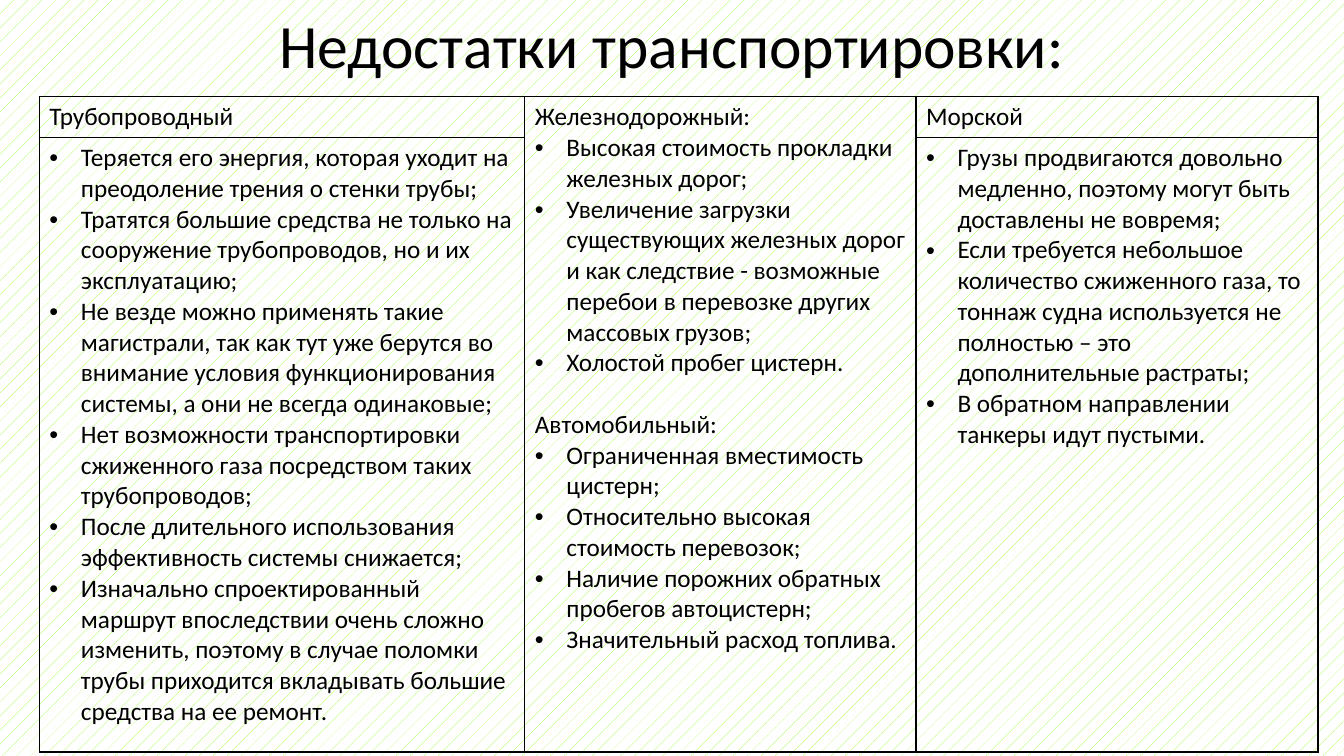
from dataclasses import dataclass

import pptx
import pptx.dml.color
import pptx.enum.dml
import pptx.enum.text
import pptx.oxml.ns
import pptx.util
from lxml import etree

Pt = pptx.util.Pt
ANCHOR = pptx.enum.text.MSO_ANCHOR
ALIGN = pptx.enum.text.PP_ALIGN


@dataclass(frozen=True)
class Theme:
    font: str = "Calibri"
    ink: str = "000000"
    paper: str = "FFFFFF"
    hatch: str = "9AF927"
    title_size: float = 44
    body_size: float = 18
    bullet_indent: float = 22.5
    section_gap: float = 22
    border_width: float = 1


@dataclass(frozen=True)
class Section:
    heading: str
    drawbacks: tuple[str, ...]


THEME = Theme()
SLIDE_SIZE = (960, 540)
TITLE_BOX = (66.2, 0, 828, 69.1)
TABLE_BOX = (28.1, 69.1, 913.4, 468)
COLUMN_WIDTHS = (346.8, 279.4, 287.2)
HEADING_HEIGHT = 29.2
ROW_HEIGHTS = (HEADING_HEIGHT, TABLE_BOX[3] - HEADING_HEIGHT)

PIPELINE = Section("Трубопроводный", (
    "Теряется его энергия, которая уходит на преодоление трения о стенки трубы;",
    "Тратятся большие средства не только на сооружение трубопроводов, но и их эксплуатацию;",
    "Не везде можно применять такие магистрали, так как тут уже берутся во внимание "
    "условия функционирования системы, а они не всегда одинаковые;",
    "Нет возможности транспортировки сжиженного газа посредством таких трубопроводов;",
    "После длительного использования эффективность системы снижается;",
    "Изначально спроектированный маршрут впоследствии очень сложно изменить, поэтому "
    "в случае поломки трубы приходится вкладывать большие средства на ее ремонт.",
))
RAILWAY = Section("Железнодорожный:", (
    "Высокая стоимость прокладки железных дорог;",
    "Увеличение загрузки существующих железных дорог и как следствие - возможные "
    "перебои в перевозке других массовых грузов;",
    "Холостой пробег цистерн.",
))
ROAD = Section("Автомобильный:", (
    "Ограниченная вместимость цистерн;",
    "Относительно высокая стоимость перевозок;",
    "Наличие порожних обратных пробегов автоцистерн;",
    "Значительный расход топлива.",
))
SEA = Section("Морской", (
    "Грузы продвигаются довольно медленно, поэтому могут быть доставлены не вовремя;",
    "Если требуется небольшое количество сжиженного газа, то тоннаж судна используется "
    "не полностью – это дополнительные растраты;",
    "В обратном направлении танкеры идут пустыми.",
))


def color(value: str) -> pptx.dml.color.RGBColor:
    return pptx.dml.color.RGBColor.from_string(value)


def add_child(parent, tag: str, **attributes: str):
    return etree.SubElement(parent, pptx.oxml.ns.qn(tag), attributes)


def write(frame, text: str, *, size: float = THEME.body_size, bullet: bool = False,
          align=ALIGN.LEFT, line_spacing: float = 1.0, space_before: float = 0) -> None:
    """Fill the frame's first paragraph, or add one if it already has text."""
    paragraph = frame.add_paragraph() if frame.text else frame.paragraphs[0]
    paragraph.alignment = align
    paragraph.line_spacing = line_spacing
    if space_before:
        paragraph.space_before = Pt(space_before)
    if bullet:
        properties = paragraph._p.get_or_add_pPr()
        indent = Pt(THEME.bullet_indent)
        properties.set("marL", str(indent))
        properties.set("indent", str(-indent))
        add_child(properties, "a:buFont", typeface="Arial")
        add_child(properties, "a:buChar", char="•")
    run = paragraph.add_run()
    run.text = text
    run.font.name = THEME.font
    run.font.size = Pt(size)
    run.font.color.rgb = color(THEME.ink)


def write_drawbacks(frame, section: Section) -> None:
    for drawback in section.drawbacks:
        write(frame, drawback, bullet=True)


def style_cell(cell) -> None:
    """Outline the cell on all sides and leave it unfilled."""
    properties = cell._tc.get_or_add_tcPr()
    for side in ("a:lnL", "a:lnR", "a:lnT", "a:lnB"):
        line = add_child(properties, side, w=str(Pt(THEME.border_width)))
        add_child(add_child(line, "a:solidFill"), "a:srgbClr", val=THEME.ink)
    cell.fill.background()


def paint_background(slide) -> None:
    fill = slide.background.fill
    fill.patterned()
    fill.pattern = pptx.enum.dml.MSO_PATTERN.PERCENT_5
    fill.fore_color.rgb = color(THEME.hatch)
    fill.back_color.rgb = color(THEME.paper)


def add_title(slide) -> None:
    frame = slide.shapes.add_textbox(*map(Pt, TITLE_BOX)).text_frame
    frame.word_wrap = True
    frame.vertical_anchor = ANCHOR.MIDDLE
    write(frame, "Недостатки транспортировки:", size=THEME.title_size,
          align=ALIGN.CENTER, line_spacing=0.9)


def add_drawbacks_table(slide) -> None:
    table = slide.shapes.add_table(2, 3, *map(Pt, TABLE_BOX)).table
    table.first_row = table.horz_banding = False
    for column, width in zip(table.columns, COLUMN_WIDTHS):
        column.width = Pt(width)
    for row, height in zip(table.rows, ROW_HEIGHTS):
        row.height = Pt(height)
    for cell in table.iter_cells():
        style_cell(cell)

    for column, section in ((0, PIPELINE), (2, SEA)):
        write(table.cell(0, column).text_frame, section.heading)
        write_drawbacks(table.cell(1, column).text_frame, section)

    table.cell(0, 1).merge(table.cell(1, 1))
    land_frame = table.cell(0, 1).text_frame
    for section, gap in ((RAILWAY, 0), (ROAD, THEME.section_gap)):
        write(land_frame, section.heading, space_before=gap)
        write_drawbacks(land_frame, section)


def main() -> None:
    presentation = pptx.Presentation()
    presentation.slide_width, presentation.slide_height = map(Pt, SLIDE_SIZE)
    slide = presentation.slides.add_slide(presentation.slide_layouts[6])
    paint_background(slide)
    add_title(slide)
    add_drawbacks_table(slide)
    presentation.save("out.pptx")


if __name__ == "__main__":
    main()
